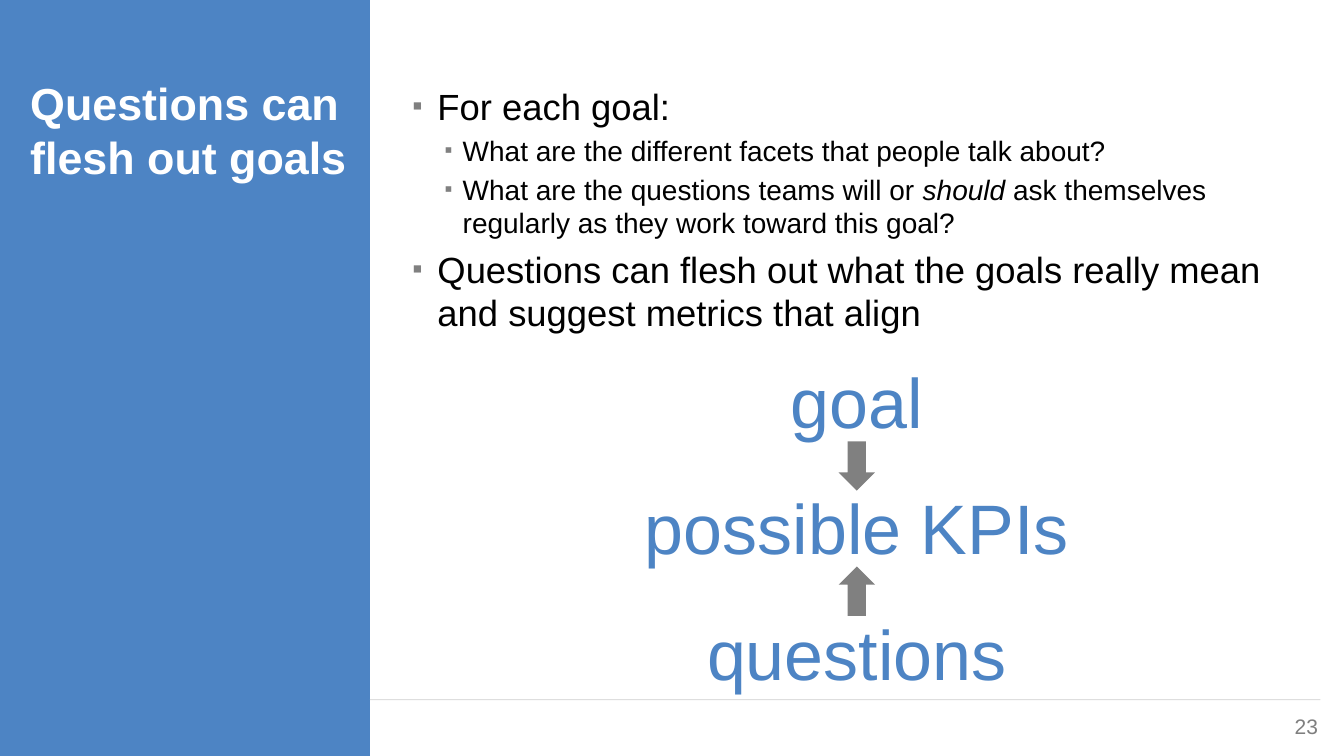
from dataclasses import dataclass

from lxml import etree
from pptx import Presentation
from pptx.dml.color import RGBColor
from pptx.enum import shapes, text
from pptx.oxml import ns
from pptx.util import Pt


@dataclass(frozen=True)
class Theme:
    font: str = "Arial"
    blue: RGBColor = RGBColor(0x4D, 0x84, 0xC4)
    grey: RGBColor = RGBColor(0x80, 0x80, 0x80)
    number: RGBColor = RGBColor(0x7F, 0x7F, 0x7F)
    rule: RGBColor = RGBColor(0xBF, 0xBF, 0xBF)
    white: RGBColor = RGBColor(0xFF, 0xFF, 0xFF)
    black: RGBColor = RGBColor(0, 0, 0)
    title_size: float = 32
    bullet_sizes: tuple[float, ...] = (26, 20)
    diagram_size: float = 50
    number_size: float = 15
    line_spacing: float = 1.0


@dataclass(frozen=True)
class Area:
    left: float
    top: float
    width: float
    height: float


@dataclass(frozen=True)
class Bullet:
    level: int
    spans: tuple[str, ...]  # every second span is italic


@dataclass(frozen=True)
class Arrow:
    top: float
    rotation: float


THEME = Theme()
PAGE_WIDTH, PAGE_HEIGHT = 960, 540
PANEL_WIDTH = 264.24
INDENTS = ((18, 18), (36, 12.96))  # text indent and hanging depth by level
BULLETS = (
    Bullet(0, ("For each goal:",)),
    Bullet(1, ("What are the different facets that people talk about?",)),
    Bullet(1, ("What are the questions teams will or ", "should",
               " ask themselves regularly as they work toward this goal?")),
    Bullet(0, ("Questions can flesh out what the goals really mean "
               "and suggest metrics that align",)),
)
DIAGRAM_WORDS = ("goal", "possible KPIs", "questions")
DIAGRAM_GAP = 30
ARROWS = (Arrow(315.2, 0), Arrow(404.6, 180))


def place(box, area: Area) -> None:
    box.left, box.top = Pt(area.left), Pt(area.top)
    box.width, box.height = Pt(area.width), Pt(area.height)


def set_frame(box, left: float, top: float, right: float, bottom: float):
    """Set wrapping, top anchoring and insets, and return the text frame."""
    frame = box.text_frame
    frame.word_wrap = True
    frame.auto_size = text.MSO_AUTO_SIZE.NONE
    frame.vertical_anchor = text.MSO_ANCHOR.TOP
    frame.margin_left, frame.margin_top = Pt(left), Pt(top)
    frame.margin_right, frame.margin_bottom = Pt(right), Pt(bottom)
    return frame


def next_paragraph(frame, index: int):
    return frame.paragraphs[0] if index == 0 else frame.add_paragraph()


def style(para, size: float, color: RGBColor, align=text.PP_ALIGN.LEFT,
          before: float = 0, bold: bool = False) -> None:
    para.alignment = align
    para.line_spacing = THEME.line_spacing
    para.space_before = Pt(before)
    para.font.name = THEME.font
    para.font.size = Pt(size)
    para.font.bold = bold
    para.font.color.rgb = color


def add_bullet_mark(para, level: int) -> None:
    indent, hanging = INDENTS[level]
    props = para._p.get_or_add_pPr()
    props.set("marL", str(Pt(indent)))
    props.set("indent", str(-Pt(hanging)))
    color = etree.SubElement(props, ns.qn("a:buClr"))
    etree.SubElement(color, ns.qn("a:srgbClr"), val=str(THEME.grey))
    etree.SubElement(props, ns.qn("a:buSzPct"), val="80000")
    etree.SubElement(props, ns.qn("a:buFont"), typeface=THEME.font)
    etree.SubElement(props, ns.qn("a:buChar"), char="▪")


def fill_title(title) -> None:
    place(title, Area(0, 0, PANEL_WIDTH, PAGE_HEIGHT))
    title.fill.solid()
    title.fill.fore_color.rgb = THEME.blue
    frame = set_frame(title, 21.6, 54, 14.4, 3.6)
    frame.text = "Questions can flesh out goals"
    style(frame.paragraphs[0], THEME.title_size, THEME.white, bold=True)


def fill_body(body) -> None:
    place(body, Area(287.3, 56.2, 639.4, 425.5))
    frame = set_frame(body, 7.2, 3.6, 7.2, 0)
    for index, bullet in enumerate(BULLETS):
        para = next_paragraph(frame, index)
        para.level = bullet.level
        add_bullet_mark(para, bullet.level)
        size = THEME.bullet_sizes[bullet.level]
        style(para, size, THEME.black, before=0.2 * size if index else 0)
        for position, words in enumerate(bullet.spans):
            span = para.add_run()
            span.text = words
            if position % 2:
                span.font.italic = True


def add_rule(page) -> None:
    """Draw the half-transparent line above the footer."""
    rule = page.shapes.add_connector(
        shapes.MSO_CONNECTOR.STRAIGHT, Pt(PANEL_WIDTH), Pt(499.7), Pt(943.2), Pt(499.7))
    rule.line.width = Pt(0.75)
    rule.line.color.rgb = THEME.rule
    props = rule._element.spPr
    color = props.find(".//" + ns.qn("a:srgbClr"))
    etree.SubElement(color, ns.qn("a:alpha"), val="50000")
    etree.SubElement(props, ns.qn("a:effectLst"))


def add_text_box(page, area: Area):
    box = page.shapes.add_textbox(0, 0, 0, 0)
    place(box, area)
    return box


def add_page_number(page) -> None:
    frame = set_frame(add_text_box(page, Area(904.3, 506.2, 57.6, 28.8)), 0, 3.6, 0, 3.6)
    frame.text = "23"
    style(frame.paragraphs[0], THEME.number_size, THEME.number, text.PP_ALIGN.CENTER)


def add_diagram(page) -> None:
    area = Area(PANEL_WIDTH, 252.7, PAGE_WIDTH - PANEL_WIDTH, 277.2)
    frame = set_frame(add_text_box(page, area), 7.2, 3.6, 7.2, 0)
    for index, word in enumerate(DIAGRAM_WORDS):
        para = next_paragraph(frame, index)
        para.text = word
        style(para, THEME.diagram_size, THEME.blue, text.PP_ALIGN.CENTER,
              before=DIAGRAM_GAP if index else 0)
    for arrow in ARROWS:
        shape = page.shapes.add_shape(
            shapes.MSO_SHAPE.DOWN_ARROW, Pt(599), Pt(arrow.top), Pt(26), Pt(35.3))
        shape.rotation = arrow.rotation
        shape.shadow.inherit = False
        shape.fill.solid()
        shape.fill.fore_color.rgb = THEME.grey
        shape.line.fill.background()


def main() -> None:
    deck = Presentation()
    deck.slide_width, deck.slide_height = Pt(PAGE_WIDTH), Pt(PAGE_HEIGHT)
    page = deck.slides.add_slide(deck.slide_layouts.get_by_name("Title and Content"))
    fill_title(page.shapes.title)
    fill_body(page.placeholders[1])
    add_rule(page)
    add_page_number(page)
    add_diagram(page)
    deck.save("out.pptx")


if __name__ == "__main__":
    main()
